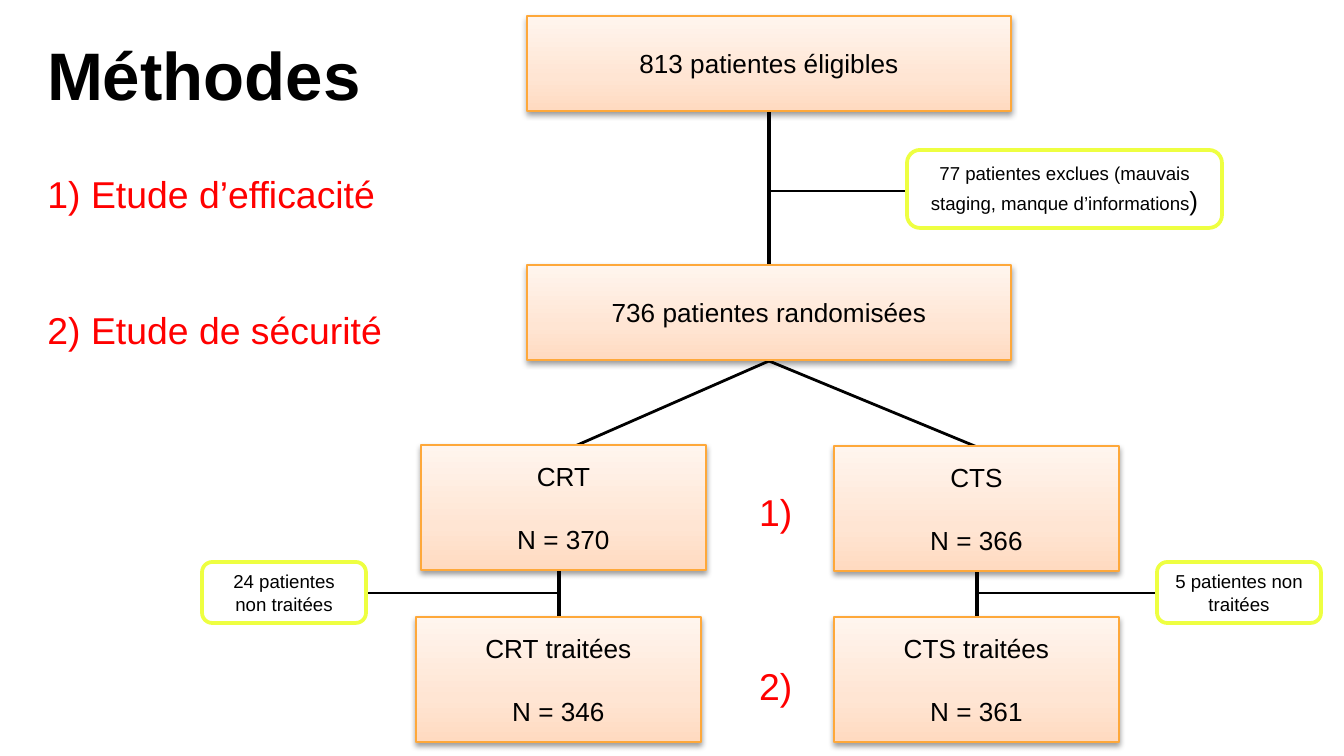
"""Build the patient flow slide of the methods section."""
from lxml.etree import SubElement
from pptx import Presentation
from pptx.dml.color import RGBColor
from pptx.enum.shapes import MSO_CONNECTOR, MSO_SHAPE
from pptx.enum.text import MSO_ANCHOR as Anchor, MSO_AUTO_SIZE as AutoSize, PP_ALIGN as Align
from pptx.oxml import parse_xml
from pptx.oxml.ns import nsdecls, qn
from pptx.util import Emu, Pt

SCALE = 914400 / 134.4
FONT = "Arial"
COLORS = {
    "black": "000000", "white": "FFFFFF", "red": "FF0000",
    "orange": "FEA83A", "yellow": "EEFF41",
    "peach": "FFDAC0", "light peach": "FFE5D3", "cream": "FFF5EE",
}
BOX_STOPS = ((0, "peach"), (35, "light peach"), (100, "cream"))


def px(length):
    return Emu(round(length * SCALE))


def rgb(name):
    return RGBColor.from_string(COLORS[name])


def add_text(paragraph, text, size=14, color="black", bold=False, align=Align.LEFT, gap=0):
    paragraph.alignment = align
    paragraph.space_before = Pt(gap)
    run = paragraph.add_run()
    run.text = text
    font = run.font
    font.name, font.size, font.bold = FONT, Pt(size), bold
    font.color.rgb = rgb(color)


class FlowSlide:
    def __init__(self, presentation):
        self.slide = presentation.slides.add_slide(presentation.slide_layouts[1])
        self.shapes = self.slide.shapes

    def place(self, shape, left, top, width, height):
        shape.left, shape.top, shape.width, shape.height = map(px, (left, top, width, height))
        frame = shape.text_frame
        frame.word_wrap = True
        frame.auto_size = AutoSize.NONE
        frame.vertical_anchor = Anchor.TOP
        return frame

    def title(self, text, *area):
        frame = self.place(self.shapes.title, *area)
        frame.margin_left = frame.margin_right = px(13)
        frame.margin_top = frame.margin_bottom = px(13)
        add_text(frame.paragraphs[0], text, size=36, bold=True)

    def body(self, lines, *area):
        frame = self.place(self.slide.placeholders[1], *area)
        for index, line in enumerate(lines):
            paragraph = frame.add_paragraph() if index else frame.paragraphs[0]
            add_text(paragraph, line, size=20, color="red", gap=49 if index else 0)
            properties = paragraph._p.get_or_add_pPr()
            properties.set("marL", "0")
            properties.set("indent", "0")
            SubElement(properties, qn("a:buNone"))

    def label(self, text, *area):
        frame = self.place(self.shapes.add_textbox(0, 0, 0, 0), *area)
        add_text(frame.paragraphs[0], text, size=20, color="red")

    def outlined(self, kind, line_color, line_width, area):
        shape = self.shapes.add_shape(kind, 0, 0, 0, 0)
        frame = self.place(shape, *area)
        frame.vertical_anchor = Anchor.MIDDLE
        shape.line.color.rgb = rgb(line_color)
        shape.line.width = Pt(line_width)
        shape.shadow.inherit = False
        return shape

    def box(self, lines, *area):
        shape = self.outlined(MSO_SHAPE.RECTANGLE, "orange", 0.75, area)
        properties = shape._element.spPr
        stops = "".join(
            f'<a:gs pos="{position * 1000}"><a:srgbClr val="{COLORS[color]}"/></a:gs>'
            for position, color in BOX_STOPS
        )
        properties.find(qn("a:prstGeom")).addnext(parse_xml(
            f'<a:gradFill {nsdecls("a")} rotWithShape="1"><a:gsLst>{stops}</a:gsLst>'
            '<a:lin ang="16200000" scaled="0"/></a:gradFill>'
        ))
        properties.find(qn("a:effectLst")).append(parse_xml(
            f'<a:outerShdw {nsdecls("a")} blurRad="{Pt(3.1)}" dist="{Pt(1.6)}" dir="5400000" '
            f'rotWithShape="0"><a:srgbClr val="{COLORS["black"]}"><a:alpha val="38000"/>'
            '</a:srgbClr></a:outerShdw>'
        ))
        frame = shape.text_frame
        for index, line in enumerate(lines):
            paragraph = frame.add_paragraph() if index else frame.paragraphs[0]
            add_text(paragraph, line, align=Align.CENTER, gap=17 if index else 0)

    def note(self, text, *area, ending=""):
        shape = self.outlined(MSO_SHAPE.ROUNDED_RECTANGLE, "yellow", 2, area)
        shape.fill.solid()
        shape.fill.fore_color.rgb = rgb("white")
        paragraph = shape.text_frame.paragraphs[0]
        add_text(paragraph, text, size=10, align=Align.CENTER)
        if ending:
            add_text(paragraph, ending, align=Align.CENTER)

    def line(self, width, *ends):
        connector = self.shapes.add_connector(MSO_CONNECTOR.STRAIGHT, *map(px, ends))
        connector.line.color.rgb = rgb("black")
        connector.line.width = Pt(width)
        SubElement(connector._element.spPr, qn("a:effectLst"))


def main():
    presentation = Presentation()
    presentation.slide_width, presentation.slide_height = px(1344), px(756)
    flow = FlowSlide(presentation)
    flow.title("Méthodes", 34, 20, 1252, 85)
    flow.body(("1) Etude d’efficacité", "2) Etude de sécurité"), 34, 164, 383, 195)

    trunk, crt, cts = 769, 559, 977
    flow.line(2.25, trunk, 111, trunk, 265)
    flow.line(1, trunk, 191, 907, 191)
    flow.line(1.5, trunk, 361, 573, 447)
    flow.line(1.5, trunk, 361, cts, 447)
    for arm, note_edge in ((crt, 365), (cts, 1157)):
        flow.line(2.25, arm, 570, arm, 617)
        flow.line(1, arm, 593, note_edge, 593)

    for text, top in (("813 patientes éligibles", 16), ("736 patientes randomisées", 265)):
        flow.box((text,), 527, top, 484, 95)
    for name, count, left, top in (
        ("CRT", 370, 421, 445), ("CRT traitées", 346, 416, 617),
        ("CTS", 366, 834, 446), ("CTS traitées", 361, 834, 617),
    ):
        flow.box((name, f"N = {count}"), left, top, 285, 125)

    flow.note("77 patientes exclues (mauvais staging, manque d’informations",
              907, 150, 315, 78, ending=")")
    for text, left in (("24 patientes non traitées", 202), ("5 patientes non traitées", 1157)):
        flow.note(text, left, 562, 164, 61)
    for text, top in (("1)", 483), ("2)", 657)):
        flow.label(text, 746, top, 65, 59)
    presentation.save("out.pptx")


if __name__ == "__main__":
    main()
